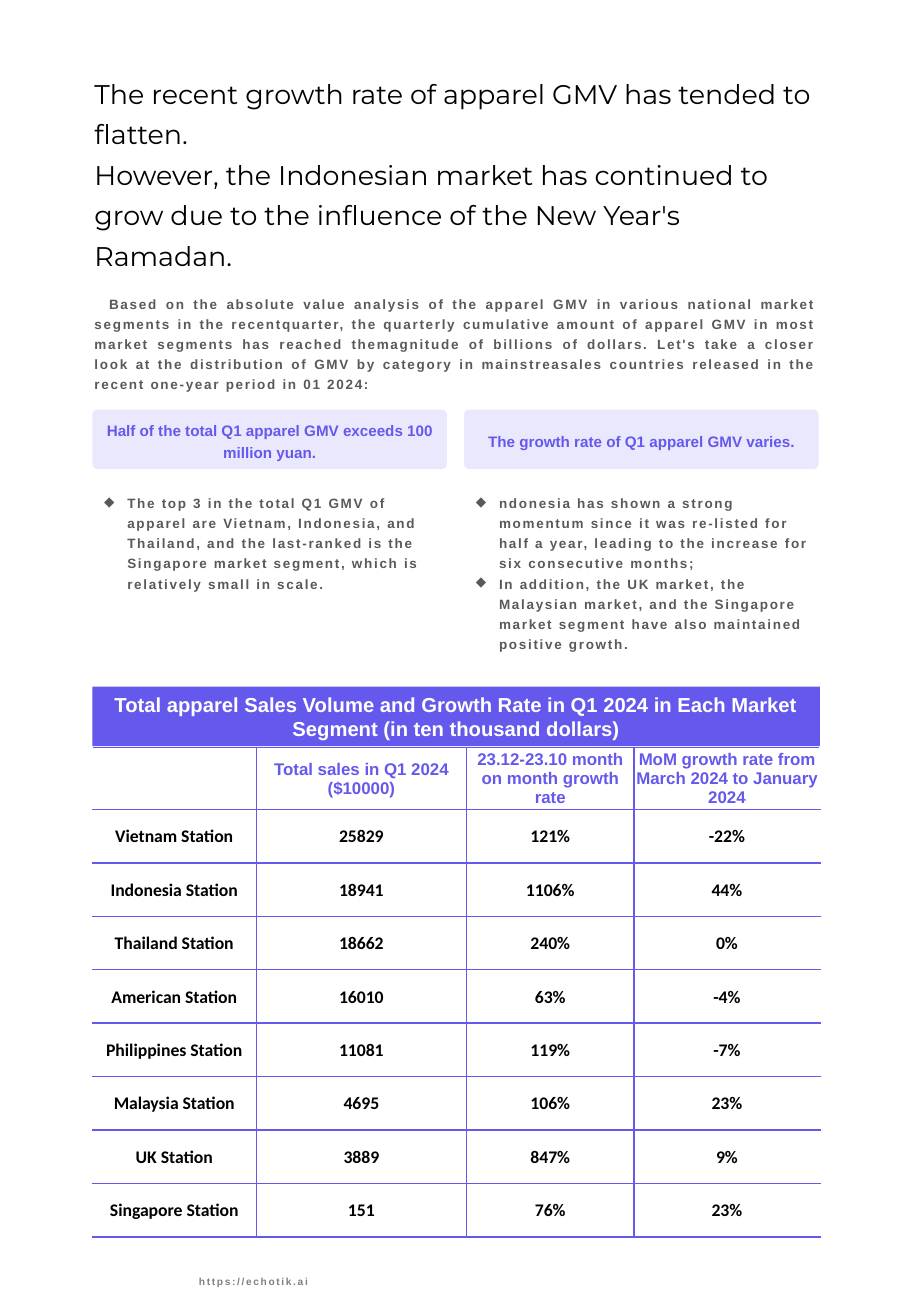
from lxml.etree import SubElement
from pptx import Presentation
from pptx.dml.color import RGBColor
from pptx.enum.shapes import MSO_SHAPE as Shape
from pptx.enum.text import MSO_ANCHOR as Anchor, PP_ALIGN as Align
from pptx.oxml import parse_xml
from pptx.oxml.ns import nsdecls, qn
from pptx.util import Inches, Pt

COLORS = {"violet": "6559ED", "pale": "EAE8FD", "gray": "595959",
          "light_gray": "808080", "black": "000000", "white": "FFFFFF"}
TITLE = ["The recent growth rate of apparel GMV has tended to flatten.",
         "However, the Indonesian market has continued to grow due to the "
         "influence of the New Year's Ramadan."]
INTRO = ("Based on the absolute value analysis of the apparel GMV in various national "
         "market segments in the recentquarter, the quarterly cumulative amount of apparel "
         "GMV in most market segments has reached themagnitude of billions of dollars. Let's "
         "take a closer look at the distribution of GMV by category in mainstreasales "
         "countries released in the recent one-year period in 01 2024:")
FINDINGS = [
    ("Half of the total Q1 apparel GMV exceeds 100 million yuan.",
     ["The top 3 in the total Q1 GMV of apparel are Vietnam, Indonesia, and Thailand, and "
      "the last-ranked is the Singapore market segment, which is relatively small in scale."]),
    ("The growth rate of Q1 apparel GMV varies.",
     ["ndonesia has shown a strong momentum since it was re-listed for half a year, "
      "leading to the increase for six consecutive months;",
      "In addition, the UK market, the Malaysian market, and the Singapore market segment "
      "have also maintained positive growth."]),
]
BANNER = ("Total apparel Sales Volume and Growth Rate in Q1 2024 in Each Market Segment "
          "(in ten thousand dollars)")
SALES = [
    ("", "Total sales in Q1 2024 ($10000)", "23.12-23.10 month on month growth rate",
     "MoM growth rate from March 2024 to January 2024"),
    ("Vietnam Station", "25829", "121%", "-22%"),
    ("Indonesia Station", "18941", "1106%", "44%"),
    ("Thailand Station", "18662", "240%", "0%"),
    ("American Station", "16010", "63%", "-4%"),
    ("Philippines Station", "11081", "119%", "-7%"),
    ("Malaysia Station", "4695", "106%", "23%"),
    ("UK Station", "3889", "847%", "9%"),
    ("Singapore Station", "151", "76%", "23%"),
]
COLUMN_WIDTHS = [1.35, 1.73, 1.38, 1.53]
HEADER_HEIGHT, ROW_HEIGHT = 0.49, 0.44


def color(name):
    """Return the named colour."""
    return RGBColor.from_string(COLORS[name])


def write(frame, texts, size, ink, font="Arial", bold=True, align=Align.LEFT,
          line=None, tracking=0, bullet=None, margin=0, indent=0, after=0):
    """Fill a text frame with equally formatted paragraphs."""
    frame.word_wrap = True
    for index, text in enumerate(texts):
        paragraph = frame.add_paragraph() if index else frame.paragraphs[0]
        properties = paragraph._p.get_or_add_pPr()
        if margin or indent:
            properties.set("marL", str(Inches(margin)))
            properties.set("indent", str(Inches(indent)))
        if bullet:
            SubElement(properties, qn("a:buChar"), char=bullet)
        paragraph.alignment = align
        if line:
            paragraph.line_spacing = line
        if after:
            paragraph.space_after = Pt(after)
        run = paragraph.add_run()
        run.text = text
        run.font.size, run.font.name, run.font.bold = Pt(size), font, bold
        run.font.color.rgb = color(ink)
        if tracking:
            run._r.get_or_add_rPr().set("spc", str(tracking * 100))


def add_text(slide, box, texts, **style):
    """Add a wrapped text box."""
    shape = slide.shapes.add_textbox(*map(Inches, box))
    write(shape.text_frame, texts, **style)


def add_panel(slide, box, fill, radius, text, **style):
    """Add a filled panel with centred text."""
    shape = slide.shapes.add_shape(Shape.ROUNDED_RECTANGLE, *map(Inches, box))
    shape.adjustments[0] = radius
    shape.shadow.inherit = False
    shape.fill.solid()
    shape.fill.fore_color.rgb = color(fill)
    shape.line.fill.background()
    shape.text_frame.vertical_anchor = Anchor.MIDDLE
    write(shape.text_frame, [text], align=Align.CENTER, **style)


def add_finding(slide, left, top, width, heading, points):
    """Add a heading panel with its bullet list below."""
    add_panel(slide, (left, top, width, 0.49), "pale", 0.09, heading,
              size=9, ink="violet", line=1.2, after=6)
    height = 0.93 if len(points) == 1 else 1.43
    add_text(slide, (left, top + 0.62, width + 0.08, height), points, size=8, ink="gray",
             line=1.25, tracking=1, bullet="◆", margin=0.19, indent=-0.19)


def set_border(cell, order, side, opaque):
    """Draw one violet cell border, solid or translucent."""
    alpha = "" if opaque else '<a:alpha val="30000"/>'
    border = parse_xml(
        f'<a:ln{side} {nsdecls("a")} w="12700"><a:solidFill>'
        f'<a:srgbClr val="{COLORS["violet"]}">{alpha}</a:srgbClr></a:solidFill>'
        f'<a:prstDash val="solid"/></a:ln{side}>')
    cell._tc.get_or_add_tcPr().insert(order, border)


def add_sales_table(slide, left, top):
    """Add the sales table with inner column lines and row lines."""
    last_row, last_column = len(SALES) - 1, len(COLUMN_WIDTHS) - 1
    height = HEADER_HEIGHT + last_row * ROW_HEIGHT
    box = (left, top, sum(COLUMN_WIDTHS), height)
    table = slide.shapes.add_table(len(SALES), len(COLUMN_WIDTHS), *map(Inches, box)).table
    table.first_row = table.horz_banding = False
    for column, width in zip(table.columns, COLUMN_WIDTHS):
        column.width = Inches(width)
    for r, values in enumerate(SALES):
        table.rows[r].height = Inches(ROW_HEIGHT if r else HEADER_HEIGHT)
        style = (dict(size=10.5, ink="black", font="Calibri") if r
                 else dict(size=10, ink="violet"))
        for c, value in enumerate(values):
            cell = table.cell(r, c)
            cell.fill.background()
            cell.vertical_anchor = Anchor.MIDDLE
            cell.margin_left = cell.margin_right = cell.margin_top = Inches(0.01)
            cell.margin_bottom = 0
            if value:
                write(cell.text_frame, [value], align=Align.CENTER, **style)
            borders = [("L", False)] if c else []
            borders += [("R", False)] if c < last_column else []
            borders += [("T", r < 2), ("B", r in (0, last_row))]
            for order, (side, opaque) in enumerate(borders):
                set_border(cell, order, side, opaque)


def build_slide(presentation):
    """Build the apparel market slide."""
    slide = presentation.slides.add_slide(presentation.slide_layouts[6])
    left, width, gap = 0.76, 5.99, 0.14
    add_text(slide, (1.54, 10.45, 1.34, 0.2), ["https://echotik.ai"], size=6,
             ink="light_gray", align=Align.JUSTIFY, tracking=1)
    add_text(slide, (0.68, 0.52, 6.14, 1.76), TITLE, size=16, ink="black",
             font="Montserrat", bold=False, line=1.25)
    add_text(slide, (0.68, 2.35, 6.14, 0.93), [INTRO], size=8, ink="gray",
             align=Align.JUSTIFY, line=1.25, tracking=1, indent=0.12)
    panel_width = 2.92
    for index, (heading, points) in enumerate(FINDINGS):
        add_finding(slide, left + index * (panel_width + gap), 3.37, panel_width,
                    heading, points)
    add_sales_table(slide, left, 6.15)
    add_panel(slide, (left, 5.65, width, 0.49), "violet", 0, BANNER, size=12, ink="white")


def main():
    """Create and save the presentation."""
    presentation = Presentation()
    presentation.slide_width, presentation.slide_height = Inches(7.5), Inches(10.83)
    build_slide(presentation)
    presentation.save("out.pptx")


if __name__ == "__main__":
    main()
